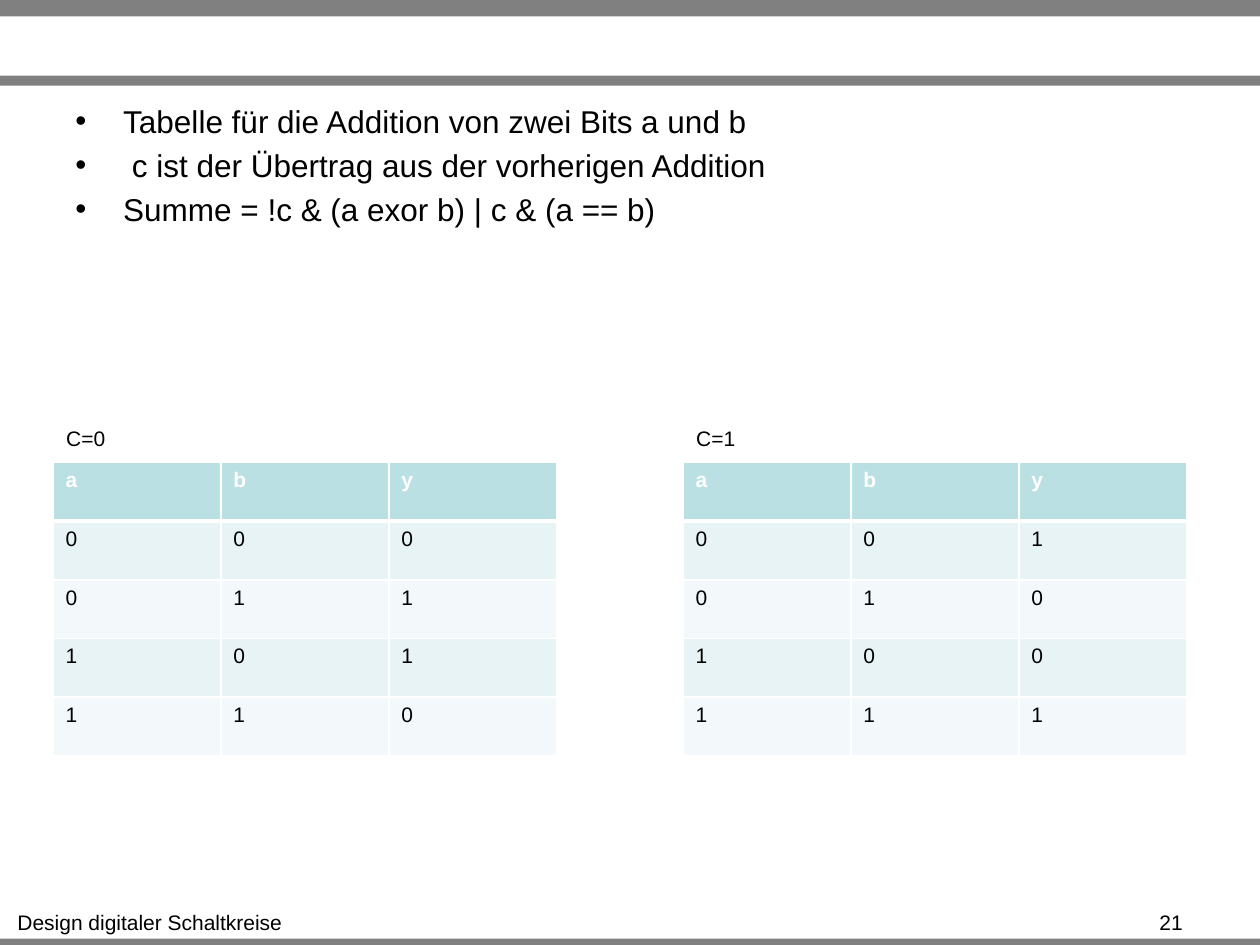
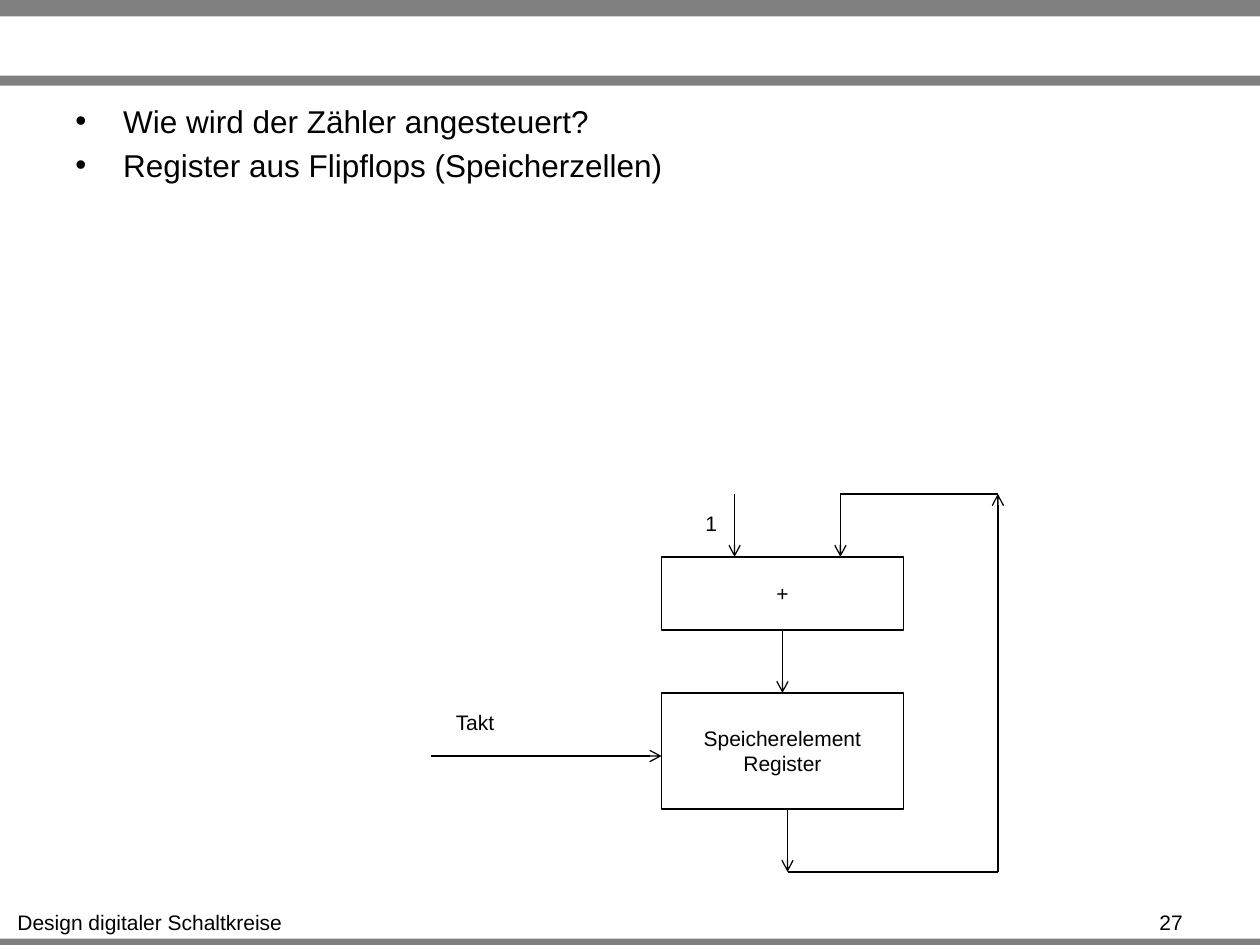
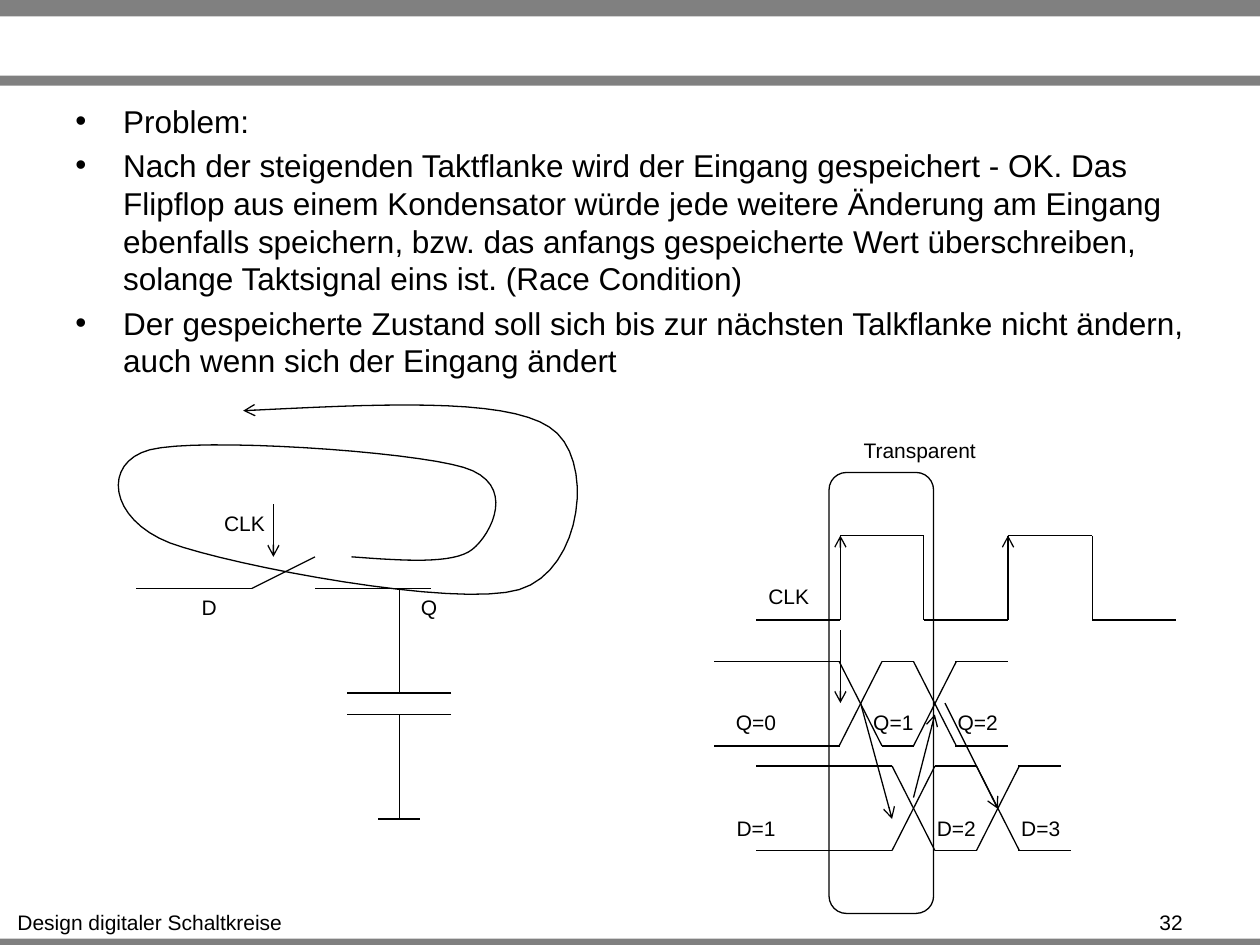
from dataclasses import dataclass
from itertools import pairwise

from pptx import Presentation
from pptx.dml.color import RGBColor
from pptx.enum.shapes import MSO_CONNECTOR, MSO_SHAPE
from pptx.enum.text import MSO_ANCHOR, PP_ALIGN
from pptx.oxml.xmlchemy import OxmlElement
from pptx.util import Inches, Pt

FONT = "Arial"
BLACK = "000000"
WHITE = "FFFFFF"
GRAY = "808080"
HEADER_FILL = "BBE0E3"
ROW_FILLS = ("E7F3F4", "F3F9FA")
LINE_WIDTH = 0.75
SMALL = 12
BODY = 18
FOOTER = "Design digitaler Schaltkreise"

Point = tuple[float, float]


@dataclass
class Label:
    text: str
    left: float
    top: float
    width: float = 0.52


@dataclass
class Box:
    left: float
    top: float
    width: float
    height: float
    lines: tuple[str, ...] = ()
    preset: MSO_SHAPE = MSO_SHAPE.RECTANGLE


@dataclass
class Wire:
    """Straight segments through the points; an arrow ends the last one."""
    points: tuple[Point, ...]
    arrow: bool = False


@dataclass
class TruthTable:
    caption: str
    left: float
    rows: tuple[str, ...]


def rgb(color: str) -> RGBColor:
    return RGBColor.from_string(color)


def add_run(paragraph, text: str, size: float = SMALL, color: str = BLACK, bold: bool = False) -> None:
    run = paragraph.add_run()
    run.text = text
    run.font.name = FONT
    run.font.size = Pt(size)
    run.font.bold = bold
    run.font.color.rgb = rgb(color)


def style_line(shape, arrow: bool = False) -> None:
    shape.line.color.rgb = rgb(BLACK)
    shape.line.width = Pt(LINE_WIDTH)
    if arrow:
        tail = OxmlElement("a:tailEnd")
        tail.set("type", "arrow")
        shape.line._get_or_add_ln().append(tail)


def add_band(slide, top: float, height: float) -> None:
    band = slide.shapes.add_shape(
        MSO_SHAPE.RECTANGLE, 0, Inches(top), Inches(10), Inches(height))
    band.shadow.inherit = False
    band.fill.solid()
    band.fill.fore_color.rgb = rgb(GRAY)
    band.line.fill.background()


def add_label(slide, label: Label) -> None:
    """Centred one-line text; without side margins it always fits its box."""
    box = slide.shapes.add_textbox(
        Inches(label.left), Inches(label.top), Inches(label.width), Inches(0.3))
    frame = box.text_frame
    frame.word_wrap = False
    frame.margin_left = frame.margin_right = 0
    paragraph = frame.paragraphs[0]
    paragraph.alignment = PP_ALIGN.CENTER
    add_run(paragraph, label.text)


def add_box(slide, box: Box) -> None:
    shape = slide.shapes.add_shape(
        box.preset, Inches(box.left), Inches(box.top), Inches(box.width), Inches(box.height))
    shape.shadow.inherit = False
    shape.fill.background()
    style_line(shape)
    frame = shape.text_frame
    frame.vertical_anchor = MSO_ANCHOR.MIDDLE
    for index, line in enumerate(box.lines):
        paragraph = frame.add_paragraph() if index else frame.paragraphs[0]
        paragraph.alignment = PP_ALIGN.CENTER
        add_run(paragraph, line)


def add_wire(slide, wire: Wire) -> None:
    segments = list(pairwise(wire.points))
    for index, (start, end) in enumerate(segments, 1):
        connector = slide.shapes.add_connector(
            MSO_CONNECTOR.STRAIGHT, *(Inches(value) for value in start + end))
        style_line(connector, wire.arrow and index == len(segments))
        connector._element.spPr.append(OxmlElement("a:effectLst"))


def add_crossing(slide, center: float, high: float, low: float) -> None:
    """X-shaped signal change between the two levels."""
    middle = (center, (high + low) / 2)
    for x in (center - 0.17, center + 0.17):
        for y in (high, low):
            add_wire(slide, Wire((middle, (x, y))))


def add_curve(slide, start: Point, curves: list[tuple[Point, Point, Point]], steps: int = 16) -> None:
    """Open outline along cubic curves, ending in an arrow."""
    points = []
    begin = start
    for first, second, end in curves:
        for step in range(1, steps + 1):
            t = step / steps
            weights = ((1 - t) ** 3, 3 * t * (1 - t) ** 2, 3 * t ** 2 * (1 - t), t ** 3)
            anchors = (begin, first, second, end)
            points.append(tuple(
                Inches(sum(w * anchor[axis] for w, anchor in zip(weights, anchors)))
                for axis in (0, 1)))
        begin = end
    builder = slide.shapes.build_freeform(Inches(start[0]), Inches(start[1]))
    builder.add_line_segments(points, close=False)
    shape = builder.convert_to_shape()
    shape.shadow.inherit = False
    shape.fill.background()
    style_line(shape, arrow=True)


def add_bullets(slide, height: float, texts: list[str]) -> None:
    box = slide.shapes.add_textbox(Inches(0.5), Inches(0.76), Inches(9), Inches(height))
    frame = box.text_frame
    frame.word_wrap = True
    for index, text in enumerate(texts):
        paragraph = frame.add_paragraph() if index else frame.paragraphs[0]
        properties = paragraph._p.get_or_add_pPr()
        properties.set("marL", str(Inches(0.38)))
        properties.set("indent", str(-Inches(0.38)))
        for tag, attribute, value in (("a:buFont", "typeface", FONT), ("a:buChar", "char", "•")):
            bullet = OxmlElement(tag)
            bullet.set(attribute, value)
            properties.append(bullet)
        if index:
            paragraph.space_before = Pt(0.2 * BODY)
        add_run(paragraph, text, BODY)


def set_borders(cell, top: float, bottom: float) -> None:
    properties = cell._tc.get_or_add_tcPr()
    for side, width in (("L", 1), ("R", 1), ("T", top), ("B", bottom)):
        line = OxmlElement(f"a:ln{side}")
        line.set("w", str(Pt(width)))
        fill = OxmlElement("a:solidFill")
        color = OxmlElement("a:srgbClr")
        color.set("val", WHITE)
        fill.append(color)
        line.append(fill)
        properties.append(line)


def add_truth_table(slide, truth_table: TruthTable) -> None:
    rows = ("aby",) + truth_table.rows
    table = slide.shapes.add_table(
        len(rows), 3, Inches(truth_table.left), Inches(3.67), Inches(4), Inches(2.33)).table
    for row_index, values in enumerate(rows):
        header = row_index == 0
        for column_index, value in enumerate(values):
            cell = table.cell(row_index, column_index)
            set_borders(cell, 3 if row_index == 1 else 1, 3 if header else 1)
            cell.fill.solid()
            cell.fill.fore_color.rgb = rgb(
                HEADER_FILL if header else ROW_FILLS[(row_index - 1) % 2])
            add_run(cell.text_frame.paragraphs[0], value,
                    color=WHITE if header else BLACK, bold=header)
    add_label(slide, Label(truth_table.caption, truth_table.left, 3.33))


def add_base_slide(presentation, number: int):
    slide = presentation.slides.add_slide(presentation.slide_layouts[6])
    for top, height in ((7.45, 0.08), (0, 0.13), (0.6, 0.08)):
        add_band(slide, top, height)
    add_label(slide, Label(FOOTER, 0.03, 7.17, 2.32))
    add_label(slide, Label(str(number), 9.11, 7.17, 0.37))
    return slide


def build_addition(presentation) -> None:
    slide = add_base_slide(presentation, 21)
    add_bullets(slide, 2.16, [
        "Tabelle für die Addition von zwei Bits a und b",
        " c ist der Übertrag aus der vorherigen Addition",
        "Summe = !c & (a exor b) | c & (a == b)",
    ])
    for truth_table in (
        TruthTable("C=0", 0.42, ("000", "011", "101", "110")),
        TruthTable("C=1", 5.42, ("001", "010", "100", "111")),
    ):
        add_truth_table(slide, truth_table)


def build_counter(presentation) -> None:
    slide = add_base_slide(presentation, 27)
    add_bullets(slide, 3.58, [
        "Wie wird der Zähler angesteuert?",
        "Register aus Flipflops (Speicherzellen)",
    ])
    add_box(slide, Box(5.25, 5.5, 1.92, 0.92, ("Speicherelement", "Register")))
    add_box(slide, Box(5.25, 4.42, 1.92, 0.58, ("+",)))
    for points in (
        ((6.21, 5), (6.21, 5.5)),
        ((6.25, 6.42), (6.25, 6.92)),
        ((6.25, 6.92), (7.92, 6.92), (7.92, 3.92)),
        ((7.92, 3.92), (6.67, 3.92), (6.67, 4.42)),
        ((5.83, 3.92), (5.83, 4.42)),
        ((3.42, 6), (5.25, 6)),
    ):
        add_wire(slide, Wire(points, arrow=True))
    add_label(slide, Label("1", 5.5, 4, 0.29))
    add_label(slide, Label("Takt", 3.51, 5.58))


def add_capacitor_cell(slide) -> None:
    for points in (
        ((1.08, 4.67), (2, 4.67), (2.5, 4.42)),
        ((2.5, 4.67), (3.42, 4.67)),
        ((3.17, 4.67), (3.17, 5.5)),
        ((3.58, 5.5), (2.75, 5.5)),
        ((3.58, 5.67), (2.75, 5.67)),
        ((3.17, 5.67), (3.17, 6.5)),
        ((3.33, 6.5), (3, 6.5)),
    ):
        add_wire(slide, Wire(points))
    add_wire(slide, Wire(((2.17, 4), (2.17, 4.42)), arrow=True))
    add_curve(slide, (2.79, 4.42), [
        ((3.2, 4.45), (3.6, 4.48), (3.75, 4.36)),
        ((3.9, 4.24), (4.11, 3.84), (3.68, 3.71)),
        ((3.25, 3.58), (1.58, 3.47), (1.19, 3.57)),
        ((0.81, 3.67), (0.86, 4.12), (1.35, 4.31)),
        ((1.84, 4.49), (3.62, 4.83), (4.12, 4.68)),
        ((4.63, 4.53), (4.73, 3.62), (4.36, 3.39)),
        ((4, 3.15), (2.96, 3.21), (1.93, 3.26)),
    ])
    for label in (
        Label("CLK", 1.68, 4), Label("D", 1.5, 4.67, 0.32), Label("Q", 3.24, 4.67, 0.33),
    ):
        add_label(slide, label)


def add_timing_diagram(slide) -> None:
    clock_high, clock_low = 4.25, 4.92
    q_high, q_low = 5.25, 5.92
    d_high, d_low = 6.08, 6.75
    rising_edges = (6.67, 8)

    clock = [(6, clock_low)]
    for rise, fall in zip(rising_edges, (7.33, 8.67)):
        clock += [(rise, clock_low), (rise, clock_high), (fall, clock_high), (fall, clock_low)]
    add_wire(slide, Wire((*clock, (9.33, clock_low))))
    for edge in rising_edges:
        add_wire(slide, Wire(((edge, clock_low), (edge, clock_high)), arrow=True))

    for center in (6.83, 7.42):
        add_crossing(slide, center, q_high, q_low)
    for center in (7.25, 7.92):
        add_crossing(slide, center, d_high, d_low)
    q_spans = ((5.67, 6.67), (7, 7.25), (7.58, 8))
    for level, spans in (
        (q_high, q_spans),
        (q_low, q_spans),
        (d_high, ((6, 7.08), (7.42, 7.75), (8.08, 8.42))),
        (d_low, ((6, 7.08), (7.42, 7.75), (8.08, 8.5))),
    ):
        for start, end in spans:
            add_wire(slide, Wire(((start, level), (end, level))))

    for points in (
        ((6.67, 5), (6.67, 5.58)),
        ((6.83, 5.58), (7.08, 6.5)),
        ((7.25, 6.33), (7.42, 5.67)),
        ((7.5, 5.58), (7.92, 6.42)),
    ):
        add_wire(slide, Wire(points, arrow=True))
    add_box(slide, Box(6.58, 3.75, 0.83, 3.5, preset=MSO_SHAPE.ROUNDED_RECTANGLE))
    for label in (
        Label("Transparent", 6.75, 3.42, 1.1), Label("CLK", 6, 4.58),
        Label("Q=0", 5.74, 5.58), Label("Q=1", 6.83, 5.58), Label("Q=2", 7.5, 5.58),
        Label("D=1", 5.74, 6.42), Label("D=2", 7.33, 6.42), Label("D=3", 8, 6.42),
    ):
        add_label(slide, label)


def build_race_condition(presentation) -> None:
    slide = add_base_slide(presentation, 32)
    add_bullets(slide, 0.91, [
        "Problem:",
        "Nach der steigenden Taktflanke wird der Eingang gespeichert - OK. Das Flipflop "
        "aus einem Kondensator würde jede weitere Änderung am Eingang ebenfalls speichern, "
        "bzw. das anfangs gespeicherte Wert überschreiben, solange Taktsignal eins ist. "
        "(Race Condition)",
        "Der gespeicherte Zustand soll sich bis zur nächsten Talkflanke nicht ändern, "
        "auch wenn sich der Eingang ändert",
    ])
    add_capacitor_cell(slide)
    add_timing_diagram(slide)


def main() -> None:
    presentation = Presentation()
    presentation.slide_width = Inches(10)
    presentation.slide_height = Inches(7.5)
    build_addition(presentation)
    build_counter(presentation)
    build_race_condition(presentation)
    presentation.save("out.pptx")


if __name__ == "__main__":
    main()
